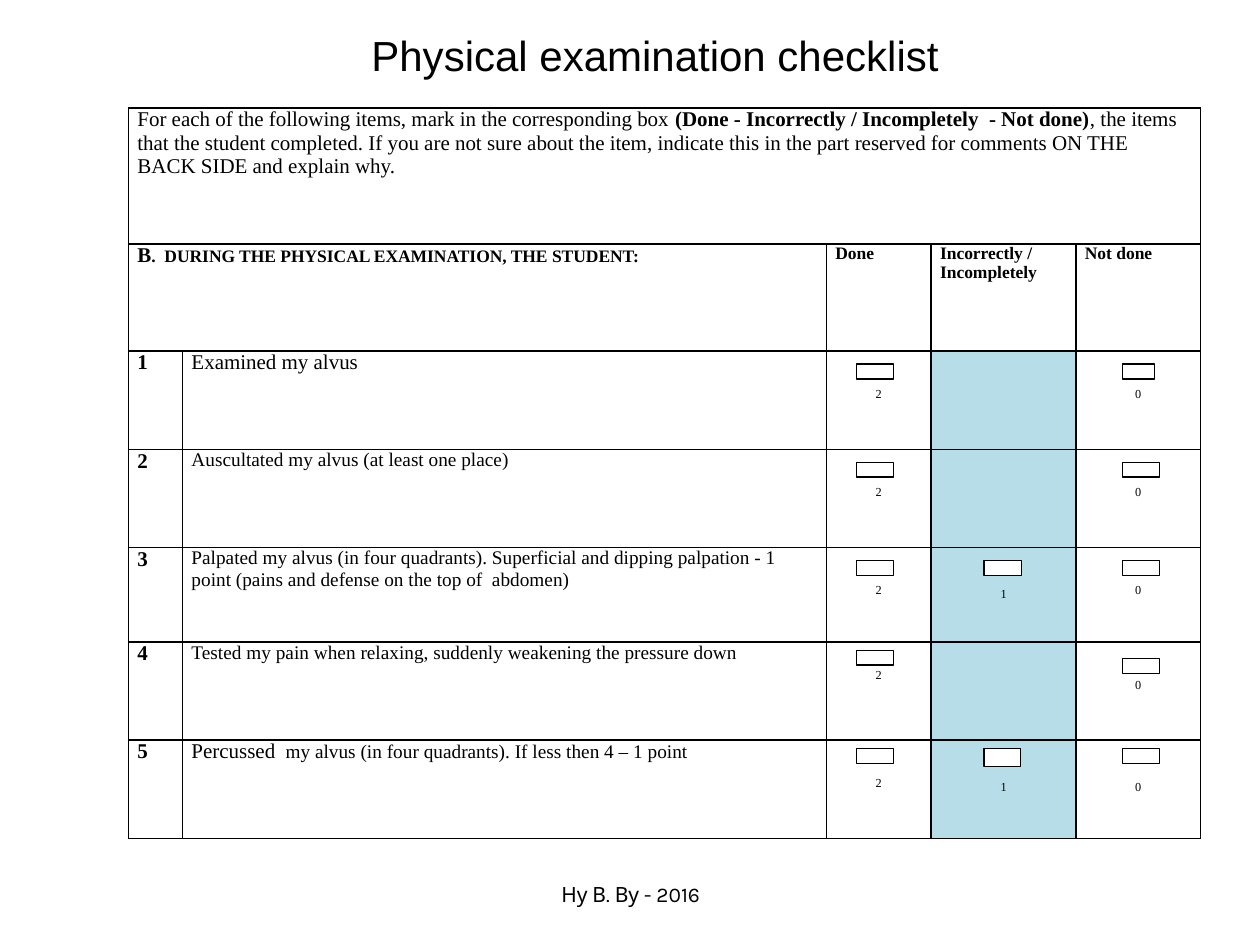
"""Build the physical examination checklist slide."""
from lxml.etree import SubElement
from pptx import Presentation
from pptx.dml.color import RGBColor
from pptx.enum.shapes import MSO_SHAPE
from pptx.enum.text import MSO_ANCHOR, MSO_AUTO_SIZE, PP_ALIGN
from pptx.oxml.ns import qn
from pptx.util import Cm, Pt

BLACK, WHITE, BLUE = "000000", "FFFFFF", "B6DDE8"
SERIF = "Times New Roman"


def color(value):
    return RGBColor.from_string(value)


def write(paragraph, runs, font_name=SERIF, align=PP_ALIGN.LEFT):
    paragraph.alignment = align
    paragraph.font.name = font_name
    paragraph.font.color.rgb = color(BLACK)
    for text, size, bold in runs:
        run = paragraph.add_run()
        run.text = text
        run.font.name = font_name
        run.font.size = Pt(size)
        run.font.bold = bold
        run.font.color.rgb = color(BLACK)


presentation = Presentation()
presentation.slide_width, presentation.slide_height = Cm(25.4), Cm(19.05)
slide = presentation.slides.add_slide(presentation.slide_layouts[5])

title = slide.shapes.title
title.left, title.top, title.width, title.height = Cm(6.5), Cm(0.46), Cm(13.41), Cm(1.27)
title.text_frame.auto_size = MSO_AUTO_SIZE.NONE
title.text_frame.vertical_anchor = MSO_ANCHOR.MIDDLE
write(title.text_frame.paragraphs[0], [("Physical examination checklist", 24, False)],
      "Arial", PP_ALIGN.CENTER)

column_widths = [1.09, 12.98, 2.11, 2.92, 2.51]
row_heights = [2.74, 2.16, 1.98, 1.98, 1.9, 1.98, 1.98]
frame = slide.shapes.add_table(7, 5, Cm(2.59), Cm(2.18),
                               Cm(sum(column_widths)), Cm(sum(row_heights)))
table = frame.table
table.first_row = table.horz_banding = False
for column, width in zip(table.columns, column_widths):
    column.width = Cm(width)
for row, height in zip(table.rows, row_heights):
    row.height = Cm(height)

for row_index, row in enumerate(table.rows):
    for column_index, cell in enumerate(row.cells):
        cell.margin_left = cell.margin_right = Cm(0.18)
        cell.margin_top = cell.margin_bottom = Cm(0)
        properties = cell._tc.get_or_add_tcPr()
        for side in ("a:lnL", "a:lnR", "a:lnT", "a:lnB"):
            border = SubElement(properties, qn(side), w=str(Pt(1)))
            SubElement(SubElement(border, qn("a:solidFill")), qn("a:srgbClr"), val=BLACK)
        cell.fill.solid()
        shaded = row_index >= 2 and column_index == 3
        cell.fill.fore_color.rgb = color(BLUE if shaded else WHITE)

table.cell(0, 0).merge(table.cell(0, 4))
table.cell(1, 0).merge(table.cell(1, 1))
headings = {
    (0, 0): [
        ("For each of the following items, mark in the corresponding box ", 12, False),
        ("(Done - Incorrectly / Incompletely  - Not done)", 12, True),
        (", the items that the student completed. If you are not sure about the item, "
         "indicate this in the part reserved for comments ON THE BACK SIDE and explain why.",
         12, False),
    ],
    (1, 0): [("В", 12, True),
             (".  DURING THE PHYSICAL EXAMINATION, THE STUDENT:", 10, True)],
    (1, 2): [("Done", 10, True)],
    (1, 3): [("Incorrectly / Incompletely", 10, True)],
    (1, 4): [("Not done", 10, True)],
}
for position, runs in headings.items():
    write(table.cell(*position).text_frame.paragraphs[0], runs)

items = [
    [("Examined my alvus", 12, False)],
    [("Auscultated my alvus (at least one place)", 11, False)],
    [("Palpated my alvus (in four quadrants). Superficial and dipping palpation - 1 point "
      "(pains and defense on the top of  abdomen)", 11, False)],
    [("Tested my pain when relaxing, suddenly weakening the pressure down", 11, False)],
    [("Percussed ", 12, False),
     (" my alvus (in four quadrants). If less then 4 – 1 point", 11, False)],
]
for number, runs in enumerate(items, start=1):
    write(table.cell(number + 1, 0).text_frame.paragraphs[0], [(str(number), 12, True)])
    write(table.cell(number + 1, 1).text_frame.paragraphs[0], runs)

box_lefts = {2: 17.27, 1: 19.84, 0: 22.63}
marks = [
    (1, 2, 0.73, 7.34, 0.74, 0.3), (1, 0, 0.73, 7.34, 0.64, 0.3),
    (2, 2, 0.73, 9.32, 0.74, 0.3), (2, 0, 0.73, 9.32, 0.74, 0.3),
    (3, 2, 0.73, 11.3, 0.74, 0.3), (3, 1, 0.81, 11.3, 0.76, 0.3),
    (3, 0, 0.73, 11.3, 0.74, 0.3),
    (4, 2, 0.53, 13.11, 0.74, 0.3), (4, 0, 0.73, 13.28, 0.74, 0.3),
    (5, 2, 0.73, 15.09, 0.74, 0.3), (5, 1, 0.81, 15.09, 0.74, 0.36),
    (5, 0, 0.81, 15.09, 0.74, 0.3),
]
for number, score, score_offset, top, width, height in marks:
    cell = table.cell(number + 1, 4 - score)
    cell.margin_top = Cm(score_offset)
    write(cell.text_frame.paragraphs[0], [(str(score), 7, False)], align=PP_ALIGN.CENTER)
    box = slide.shapes.add_shape(MSO_SHAPE.RECTANGLE, Cm(box_lefts[score]), Cm(top),
                                 Cm(width), Cm(height))
    box.shadow.inherit = False
    box.fill.solid()
    box.fill.fore_color.rgb = color(WHITE)
    box.line.color.rgb = color(BLACK)
    box.line.width = Pt(0.75)

footer = slide.shapes.add_textbox(Cm(8.69), Cm(17.65), Cm(8.05), Cm(1.02))
footer.text_frame.word_wrap = True
write(footer.text_frame.paragraphs[0], [("Ну В. Ву - 2016", 12, False)],
      "Karla", PP_ALIGN.CENTER)

presentation.save("out.pptx")
